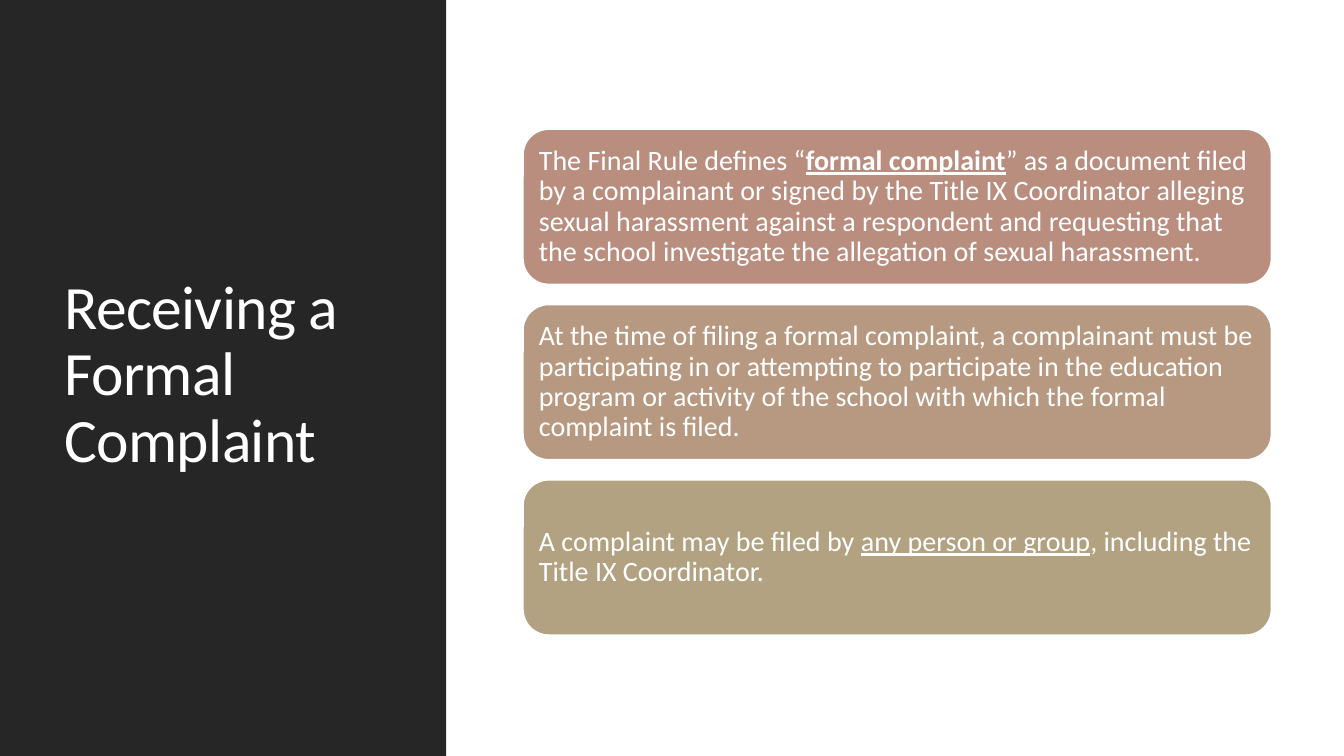
from dataclasses import dataclass

from pptx import Presentation
from pptx.dml.color import RGBColor
from pptx.enum.shapes import MSO_SHAPE
from pptx.enum.text import MSO_ANCHOR, PP_ALIGN
from pptx.shapes.autoshape import Shape
from pptx.slide import Slide
from pptx.util import Emu, Pt

COLORS = {
    "white": "FFFFFF",
    "charcoal": "262626",
    "rose": "BA8E7F",
    "tan": "B69980",
    "olive": "B2A281",
}
FONT = "Calibri"
CARD_LEFT, CARD_TOP, CARD_WIDTH, CARD_HEIGHT = 498, 123, 713, 148
CARD_PITCH = 167
CARD_INSET = 8


@dataclass(frozen=True)
class Span:
    text: str
    bold: bool = False
    underline: bool = False


@dataclass(frozen=True)
class Card:
    color: str
    spans: tuple[Span, ...]


CARDS = (
    Card("rose", (
        Span("The Final Rule defines “"),
        Span("formal complaint", bold=True, underline=True),
        Span("” as a document filed by a complainant or signed by the "
             "Title IX Coordinator alleging sexual harassment against a "
             "respondent and requesting that the school investigate the "
             "allegation of sexual harassment."),
    )),
    Card("tan", (
        Span("At the time of filing a formal complaint, a complainant must be "
             "participating in or attempting to participate in the education "
             "program or activity of the school with which the formal "
             "complaint is filed."),
    )),
    Card("olive", (
        Span("A complaint may be filed by "),
        Span("any person or group", underline=True),
        Span(", including the Title IX Coordinator."),
    )),
)


def px(length: int) -> Emu:
    return Emu(length * 9525)


def color(name: str) -> RGBColor:
    return RGBColor.from_string(COLORS[name])


def add_block(page: Slide, kind: MSO_SHAPE, left: int, top: int,
              width: int, height: int, fill: str) -> Shape:
    block = page.shapes.add_shape(kind, px(left), px(top), px(width), px(height))
    block.shadow.inherit = False
    block.fill.solid()
    block.fill.fore_color.rgb = color(fill)
    block.line.fill.background()
    return block


def write_text(box: Shape, spans: tuple[Span, ...], size: int, tracking: int = 0) -> None:
    frame = box.text_frame
    frame.word_wrap = True
    frame.vertical_anchor = MSO_ANCHOR.MIDDLE
    para = frame.paragraphs[0]
    para.alignment = PP_ALIGN.LEFT
    para.line_spacing = 0.9
    for span in spans:
        run = para.add_run()
        run.text = span.text
        run.font.name = FONT
        run.font.size = Pt(size)
        run.font.bold = span.bold
        run.font.underline = span.underline
        run.font.color.rgb = color("white")
        if tracking:
            run.font._element.set("spc", str(tracking))


def add_card(page: Slide, card: Card, top: int) -> None:
    box = add_block(page, MSO_SHAPE.ROUNDED_RECTANGLE, CARD_LEFT, top,
                    CARD_WIDTH, CARD_HEIGHT, card.color)
    box.line.color.rgb = color("white")
    box.line.width = Pt(1.25)
    frame = box.text_frame
    frame.margin_left = frame.margin_right = px(CARD_INSET)
    frame.margin_top = frame.margin_bottom = px(CARD_INSET)
    write_text(box, card.spans, 20)


def main() -> None:
    deck = Presentation()
    deck.slide_width, deck.slide_height = px(1280), px(720)
    page = deck.slides.add_slide(deck.slide_layouts[6])

    add_block(page, MSO_SHAPE.RECTANGLE, 0, 0, 425, 720, "charcoal")
    title = page.shapes.add_textbox(px(52), px(55), px(324), px(606))
    write_text(title, (Span("Receiving a Formal Complaint"),), 44, tracking=-50)

    for index, card in enumerate(CARDS):
        add_card(page, card, CARD_TOP + index * CARD_PITCH)

    deck.save("out.pptx")


if __name__ == "__main__":
    main()
